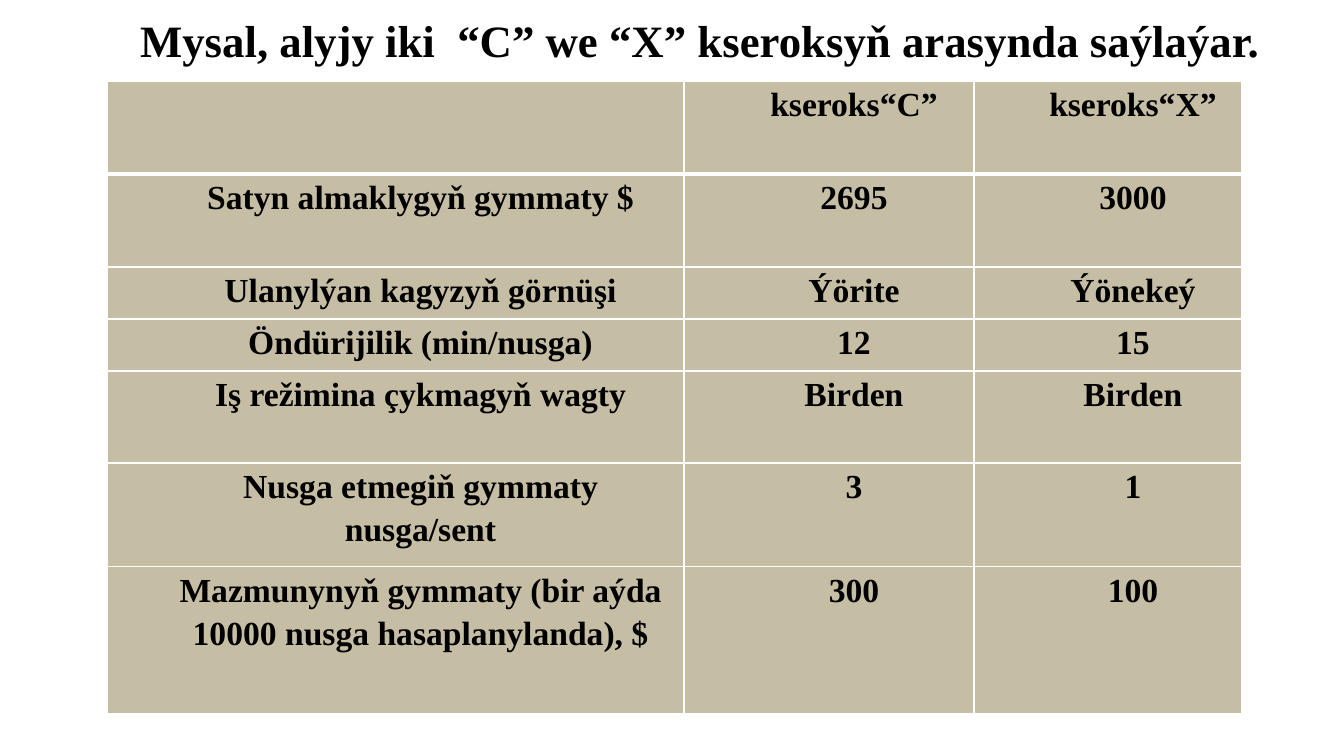
import pptx
import pptx.dml.color
import pptx.enum.text
import pptx.oxml
import pptx.oxml.ns
import pptx.util

SCALE = 914400 / 100.8  # EMU in one px
BLACK = pptx.dml.color.RGBColor(0x00, 0x00, 0x00)
WHITE = pptx.dml.color.RGBColor(0xFF, 0xFF, 0xFF)
SAND = pptx.dml.color.RGBColor(0xC6, 0xBD, 0xA5)
ALIGN = pptx.enum.text.PP_ALIGN

TITLE = "Mysal, alyjy iki  “C” we “Х” kseroksyň arasynda saýlaýar."
COLS = [577, 290, 268]
ROWS = [
    (93, ["", "kseroks“C”", "kseroks“Х”"]),
    (93, ["Satyn almaklygyň gymmaty $", "2695", "3000"]),
    (52, ["Ulanylýan kagyzyň görnüşi", "Ýörite", "Ýönekeý"]),
    (52, ["Öndürijilik (min/nusga)", "12", "15"]),
    (92, ["Iş režimina çykmagyň wagty", "Birden", "Birden"]),
    (104, ["Nusga etmegiň gymmaty nusga/sent", "3", "1"]),
    (147, ["Mazmunynyň gymmaty (bir aýda 10000 nusga hasaplanylanda), $",
           "300", "100"]),
]
FONT = {"name": "Times New Roman", "bold": True}


def px(count):
    return pptx.util.Emu(round(count * SCALE))


def apply(target, values):
    for name, value in values.items():
        setattr(target, name, value)


def write(frame, text, size, indent, align, after):
    """Put one formatted paragraph into a text frame."""
    frame.text = text
    line = frame.paragraphs[0]
    apply(line, {"alignment": align, "line_spacing": 1.15,
                 "space_before": pptx.util.Pt(0),
                 "space_after": pptx.util.Pt(after)})
    props = line._p.get_or_add_pPr()
    props.set("marL", str(px(indent)))
    props.set("indent", "0")
    for run in line.runs:
        apply(run.font, {**FONT, "size": pptx.util.Pt(size)})
        run.font.color.rgb = BLACK


def border(cell, base):
    """Draw white cell edges; base is the width of the lower one in points."""
    props = cell._tc.get_or_add_tcPr()
    widths = {"L": 1, "R": 1, "T": 1, "B": base}
    for place, (side, width) in enumerate(widths.items()):
        props.insert(place, pptx.oxml.parse_xml(
            f'<a:ln{side} {pptx.oxml.ns.nsdecls("a")} w="{pptx.util.Pt(width)}">'
            f'<a:solidFill><a:srgbClr val="{WHITE}"/></a:solidFill></a:ln{side}>'))


def add_title(slide):
    title = slide.shapes.title
    apply(title, {"left": px(100), "top": px(0),
                  "width": px(1180), "height": px(69)})
    apply(title.text_frame, {
        "word_wrap": False,
        "auto_size": pptx.enum.text.MSO_AUTO_SIZE.SHAPE_TO_FIT_TEXT,
        "vertical_anchor": pptx.enum.text.MSO_ANCHOR.TOP})
    write(title.text_frame, TITLE, 32, 30, ALIGN.JUSTIFY, 10)


def add_grid(slide):
    high = sum(height for height, _ in ROWS)
    grid = slide.shapes.add_table(len(ROWS), len(COLS), px(107), px(81),
                                  px(sum(COLS)), px(high)).table
    grid.horz_banding = False
    for col, width in zip(grid.columns, COLS):
        col.width = px(width)
    for r, (height, texts) in enumerate(ROWS):
        grid.rows[r].height = px(height)
        for c, text in enumerate(texts):
            cell = grid.cell(r, c)
            apply(cell, {"margin_left": px(7), "margin_right": px(7),
                         "margin_top": 0, "margin_bottom": 0})
            cell.fill.solid()
            cell.fill.fore_color.rgb = SAND
            # The header row has a heavier rule below it
            border(cell, 3 if r == 0 else 1)
            if r == 1:
                top = cell._tc.tcPr.find(pptx.oxml.ns.qn("a:lnT"))
                top.set("w", str(pptx.util.Pt(3)))
            if text:
                last = c == len(COLS) - 1
                write(cell.text_frame, text, 24, 50, ALIGN.CENTER,
                      10 if last else 0)


def main():
    deck = pptx.Presentation()
    apply(deck, {"slide_width": px(1344), "slide_height": px(756)})
    slide = deck.slides.add_slide(deck.slide_layouts.get_by_name("Title Only"))
    add_grid(slide)
    add_title(slide)
    deck.save("out.pptx")


if __name__ == "__main__":
    main()
